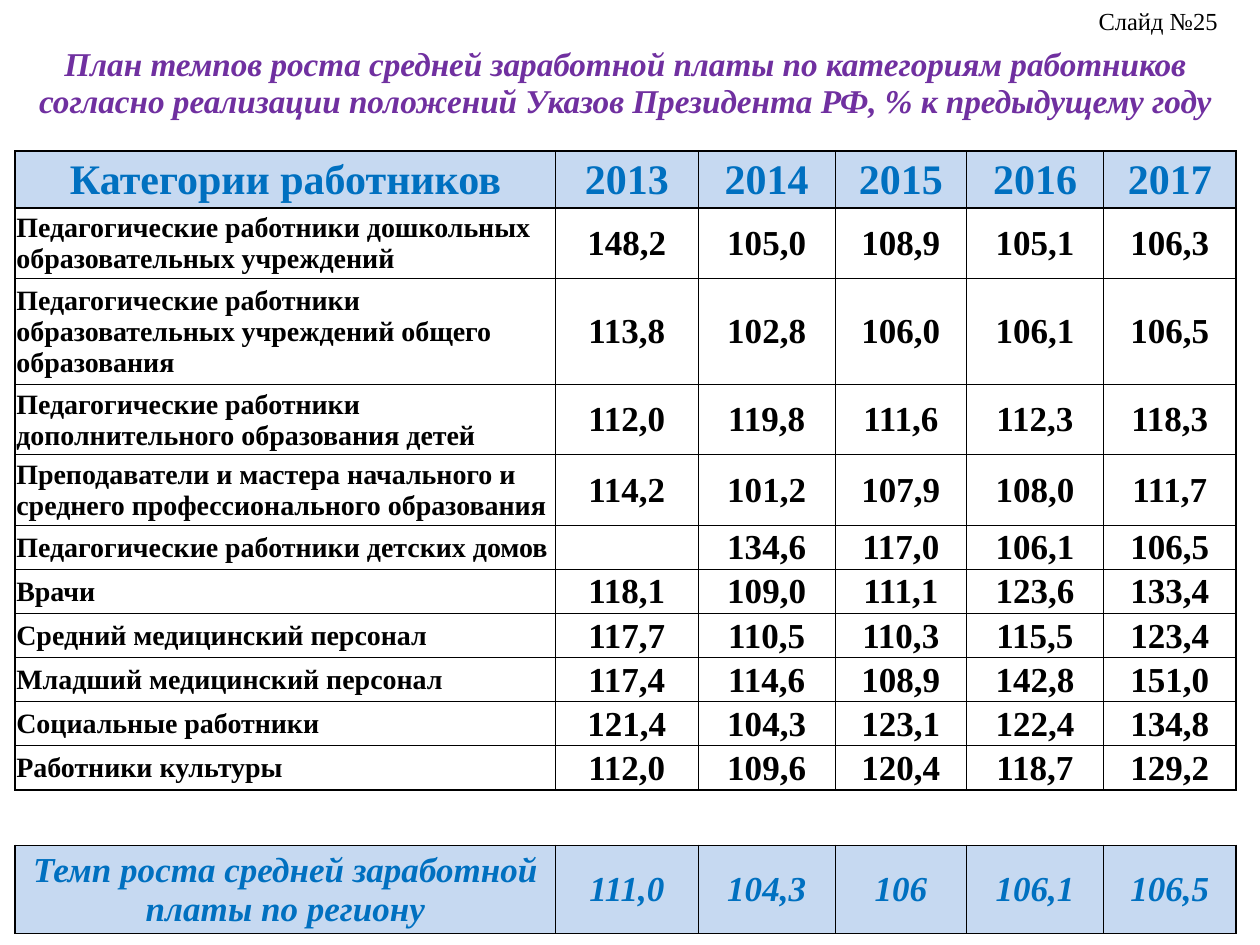
from lxml import etree
from pptx import Presentation
from pptx.dml.color import RGBColor
from pptx.enum import text
from pptx.oxml.ns import qn
from pptx.util import Inches, Pt

FONT = "Times New Roman"
BLACK, BLUE, PURPLE, PALE = "000000", "0070C0", "7030A0", "C6D9F1"
THICK, THIN = 1, 0.5

SLIDE_LABEL = "Слайд №25"
TITLE = ("План темпов роста средней заработной платы по категориям работников "
         "согласно реализации положений Указов Президента РФ, % к предыдущему году")
HEADER = ["Категории работников", "2013", "2014", "2015", "2016", "2017"]
GROWTH = [
    ["Педагогические работники дошкольных образовательных учреждений",
     "148,2", "105,0", "108,9", "105,1", "106,3"],
    ["Педагогические работники образовательных учреждений общего образования",
     "113,8", "102,8", "106,0", "106,1", "106,5"],
    ["Педагогические работники дополнительного образования детей",
     "112,0", "119,8", "111,6", "112,3", "118,3"],
    ["Преподаватели и мастера начального и среднего профессионального образования",
     "114,2", "101,2", "107,9", "108,0", "111,7"],
    ["Педагогические работники детских домов", "", "134,6", "117,0", "106,1", "106,5"],
    ["Врачи", "118,1", "109,0", "111,1", "123,6", "133,4"],
    ["Средний медицинский персонал", "117,7", "110,5", "110,3", "115,5", "123,4"],
    ["Младший медицинский персонал", "117,4", "114,6", "108,9", "142,8", "151,0"],
    ["Социальные работники", "121,4", "104,3", "123,1", "122,4", "134,8"],
    ["Работники культуры", "112,0", "109,6", "120,4", "118,7", "129,2"],
]
REGION = ["Темп роста средней заработной платы по региону",
          "111,0", "104,3", "106", "106,1", "106,5"]

COL_WIDTHS = [4.29, 1.13, 1.09, 1.04, 1.09, 1.05]
ROW_HEIGHTS = [0.64, 0.22, 0.45, 0.56, 0.84, 0.56, 0.56] + [0.35] * 6 + [0.44, 0.7]
BLANK = [""] * len(HEADER)
ROWS = [[TITLE] + BLANK[1:], BLANK, HEADER, *GROWTH, BLANK, REGION]
HEAD_ROW, REGION_ROW = 2, len(ROWS) - 1
FIRST, LAST = HEAD_ROW + 1, HEAD_ROW + len(GROWTH)
LAST_COL = len(HEADER) - 1

STYLES = {
    "title": dict(size=19, color=PURPLE, italic=True),
    "header": dict(size=24, color=BLUE),
    "region": dict(size=20, color=BLUE, italic=True),
    "category": dict(size=16, color=BLACK),
    "value": dict(size=20, color=BLACK),
}


def rgb(value):
    return RGBColor.from_string(value)


def style_run(r, size, color, bold=True, italic=False):
    values = dict(name=FONT, size=Pt(size), bold=bold, italic=italic)
    for name, value in values.items():
        setattr(r.font, name, value)
    r.font.color.rgb = rgb(color)


def style_name(row, col):
    special = {0: "title", HEAD_ROW: "header", REGION_ROW: "region"}
    return special.get(row, "value" if col else "category")


def edge_widths(row, col):
    """Line width in points for each side of a cell, zero for no line."""
    above = 0 if row < HEAD_ROW else THIN if FIRST < row <= LAST else THICK
    below = 0 if row == 0 else THIN if FIRST <= row < LAST else THICK
    gridded = HEAD_ROW <= row <= LAST or row == REGION_ROW
    left = gridded and (THIN if col else THICK)
    right = gridded and (THICK if col == LAST_COL else THIN)
    return {"L": left, "R": right, "T": above, "B": below}


def draw_edges(cell, widths):
    tcPr = cell._tc.get_or_add_tcPr()
    for side, width in widths.items():
        ln = etree.SubElement(tcPr, qn(f"a:ln{side}"), w=str(Pt(width)))
        if width:
            fill = etree.SubElement(ln, qn("a:solidFill"))
            etree.SubElement(fill, qn("a:srgbClr"), val=BLACK)
        else:
            etree.SubElement(ln, qn("a:noFill"))


def fill_cell(cell, row, col, content):
    margins = dict(margin_left=0.01, margin_top=0.01, margin_right=0.01, margin_bottom=0)
    for name, value in margins.items():
        setattr(cell, name, Inches(value))
    cell.vertical_anchor = text.MSO_ANCHOR.MIDDLE
    draw_edges(cell, edge_widths(row, col))
    if row in (HEAD_ROW, REGION_ROW):
        cell.fill.solid()
        cell.fill.fore_color.rgb = rgb(PALE)
    else:
        cell.fill.background()
    p = cell.text_frame.paragraphs[0]
    if not content:
        # a small end mark keeps the low empty rows at their height
        etree.SubElement(p._p, qn("a:endParaRPr"), sz="1000")
        return
    name = style_name(row, col)
    p.alignment = text.PP_ALIGN.LEFT if name == "category" else text.PP_ALIGN.CENTER
    r = p.add_run()
    r.text = content
    style_run(r, **STYLES[name])


def add_growth_table(s):
    table = s.shapes.add_table(len(ROWS), len(HEADER), Inches(0.12), Inches(0.34),
                               Inches(sum(COL_WIDTHS)), Inches(sum(ROW_HEIGHTS))).table
    table.first_row = table.horz_banding = False
    for column, width in zip(table.columns, COL_WIDTHS):
        column.width = Inches(width)
    for row, height in zip(table.rows, ROW_HEIGHTS):
        row.height = Inches(height)
    table.cell(0, 0).merge(table.cell(0, LAST_COL))
    for i, contents in enumerate(ROWS):
        for j, content in enumerate(contents):
            fill_cell(table.cell(i, j), i, j, content)


def add_slide_label(s):
    tf = s.shapes.add_textbox(Inches(8.62), 0, Inches(1.41), Inches(0.34)).text_frame
    tf.word_wrap = True
    tf.auto_size = text.MSO_AUTO_SIZE.SHAPE_TO_FIT_TEXT
    r = tf.paragraphs[0].add_run()
    r.text = SLIDE_LABEL
    style_run(r, 14, BLACK, bold=False)


def main():
    prs = Presentation()
    prs.slide_width, prs.slide_height = Inches(10), Inches(7.5)
    s = prs.slides.add_slide(prs.slide_layouts[6])
    add_growth_table(s)
    add_slide_label(s)
    prs.save("out.pptx")


if __name__ == "__main__":
    main()
